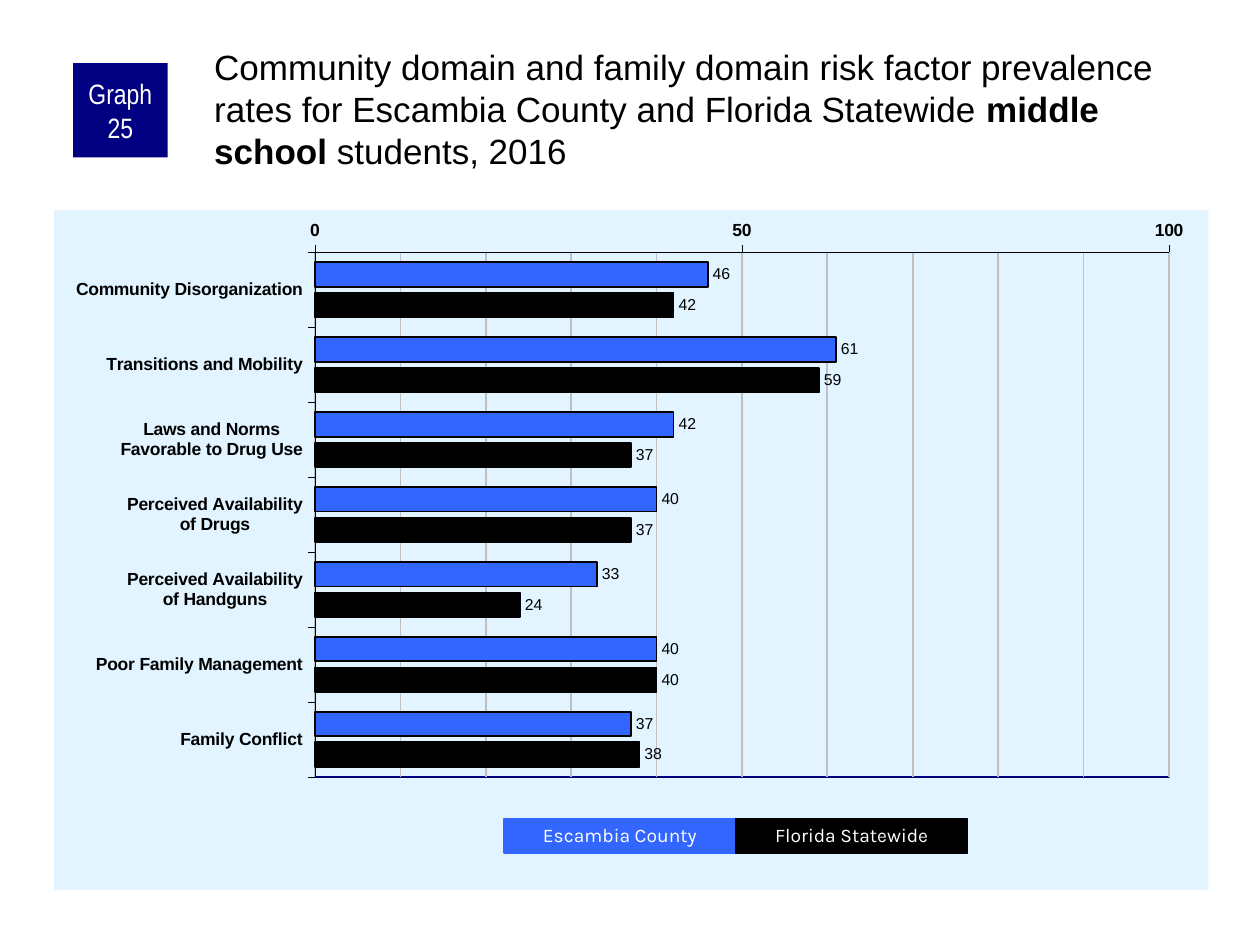
import pptx
import pptx.chart.data
import pptx.dml.color
import pptx.enum.chart
import pptx.enum.shapes
import pptx.enum.text
import pptx.oxml
import pptx.oxml.ns
import pptx.util
from pptx.util import Inches, Pt

CHART = pptx.enum.chart
TEXT = pptx.enum.text

TITLE = [
    ("Community domain and family domain risk factor prevalence rates "
     "for Escambia County and Florida Statewide ", False),
    ("middle school", True),
    (" students, 2016", False),
]
RATES = [
    ("Community Disorganization", 46, 42),
    ("Transitions and Mobility", 61, 59),
    ("Laws and Norms\nFavorable to Drug Use", 42, 37),
    ("Perceived Availability\nof Drugs", 40, 37),
    ("Perceived Availability\nof Handguns", 33, 24),
    ("Poor Family Management", 40, 40),
    ("Family Conflict", 37, 38),
]
AREAS = [("Escambia County", "3366FF"), ("Florida Statewide", "000000")]
PLOT = {"x": 0.226, "y": 0.062, "w": 0.74, "h": 0.772}
KEY = (4, 6.5, 1.84, 0.27)


def color(code):
    return pptx.dml.color.RGBColor.from_string(code)


def style(font, size, code, name="Arial", bold=None):
    font.size, font.name, font.bold = Pt(size), name, bold
    font.color.rgb = color(code)


def stroke(line, code, width):
    line.color.rgb = color(code)
    line.width = Pt(width)


def node(tag, body):
    return pptx.oxml.parse_xml(
        f'<c:{tag} {pptx.oxml.ns.nsdecls("c", "a")}>{body}</c:{tag}>')


def solid(code):
    return f'<a:solidFill><a:srgbClr val="{code}"/></a:solidFill>'


def border(code):
    """Return the XML of a one-point line."""
    return f'<a:ln w="{Pt(1)}">{solid(code)}</a:ln>'


def add_title(slide):
    title = slide.shapes.title
    title.left, title.top = Inches(1.67), Inches(0.33)
    title.width, title.height = Inches(7.92), Inches(0.83)
    frame = title.text_frame
    frame.auto_size = TEXT.MSO_AUTO_SIZE.NONE
    frame.word_wrap = True
    frame.vertical_anchor = TEXT.MSO_ANCHOR.TOP
    frame.margin_left = frame.margin_top = Inches(0.03)
    frame.margin_right = frame.margin_bottom = 0
    para = frame.paragraphs[0]
    para.alignment = TEXT.PP_ALIGN.LEFT
    style(para.font, 20, "000000")
    for text, bold in TITLE:
        run = para.add_run()
        run.text, run.font.bold = text, bold


def add_box(slide, text, place, fill, size, font):
    box = slide.shapes.add_shape(
        pptx.enum.shapes.MSO_SHAPE.RECTANGLE, *map(Inches, place))
    box.shadow.inherit = False
    box.fill.solid()
    box.fill.fore_color.rgb = color(fill)
    box.line.fill.background()
    frame = box.text_frame
    frame.word_wrap = True
    frame.vertical_anchor = TEXT.MSO_ANCHOR.MIDDLE
    para = frame.paragraphs[0]
    para.text = text
    para.alignment = TEXT.PP_ALIGN.CENTER
    style(para.font, size, "FFFFFF", font)
    return box


def add_rates(slide):
    data = pptx.chart.data.CategoryChartData()
    data.categories = [row[0] for row in RATES]
    for i in range(len(AREAS)):
        data.add_series(f"Series {i + 1}", [row[i + 1] for row in RATES])
    chart = slide.shapes.add_chart(
        CHART.XL_CHART_TYPE.BAR_CLUSTERED,
        *map(Inches, (0.43, 1.67, 9.16, 5.39)), data).chart
    chart.has_legend = chart.has_title = False
    style(chart.font, 11.8, "000000")

    plot = chart.plots[0]
    plot.gap_width, plot.overlap = 80, -25
    plot.vary_by_categories = False
    for series, (_, code) in zip(plot.series, AREAS):
        series.format.fill.solid()
        series.format.fill.fore_color.rgb = color(code)
        stroke(series.format.line, "000000", 1)
        labels = series.data_labels
        labels.show_value = True
        labels.position = CHART.XL_LABEL_POSITION.OUTSIDE_END
        style(labels.font, 9, "000000")

    cats, vals = chart.category_axis, chart.value_axis
    for axis in (cats, vals):
        axis.major_tick_mark = CHART.XL_TICK_MARK.OUTSIDE
        axis.minor_tick_mark = CHART.XL_TICK_MARK.NONE
        stroke(axis.format.line, "000000", 0.25)
        style(axis.tick_labels.font, 10, "000000", bold=True)
    cats.reverse_order = True
    cats.crosses = CHART.XL_AXIS_CROSSES.MAXIMUM
    vals.minimum_scale, vals.maximum_scale = 0, 100
    vals.major_unit, vals.minor_unit = 50, 10
    vals.has_major_gridlines = vals.has_minor_gridlines = True
    stroke(vals.major_gridlines.format.line, "C0C0C0", 1)
    paint(chart)


def paint(chart):
    """Set the plot place and border, minor grid and background."""
    root, qn = chart.element, pptx.oxml.ns.qn
    root.find(".//" + qn("c:minorGridlines")).append(
        node("spPr", border("C0C0C0")))
    area = root.find(".//" + qn("c:plotArea"))
    for old in area.findall(qn("c:layout")):
        area.remove(old)
    modes = "".join(f'<c:{k}Mode val="edge"/>' for k in "xy")
    sizes = "".join(f'<c:{k} val="{v}"/>' for k, v in PLOT.items())
    area.insert(0, node(
        "layout", f'<c:manualLayout><c:layoutTarget val="inner"/>'
                  f'{modes}{sizes}</c:manualLayout>'))
    area.append(node("spPr", "<a:noFill/>" + border("000080")))
    root.find(qn("c:chart")).addnext(node(
        "spPr", solid("E1F4FF") + "<a:ln><a:noFill/></a:ln>"))


def main():
    deck = pptx.Presentation()
    deck.slide_width, deck.slide_height = Inches(10), Inches(7.5)
    slide = deck.slides.add_slide(deck.slide_layouts[5])
    add_title(slide)
    add_rates(slide)

    badge = add_box(slide, "Graph 25", (0.58, 0.5, 0.75, 0.75),
                    "000080", 16, "Arial Narrow").text_frame
    badge.margin_left = badge.margin_right = Inches(0.05)
    badge.margin_top = badge.margin_bottom = 0

    left, top, width, height = KEY
    for i, (name, code) in enumerate(AREAS):
        box = add_box(slide, name, (left + i * width, top, width, height),
                      code, 11, "Karla")
        stroke(box.line, code, 0.75)
        box.text_frame.paragraphs[0].line_spacing = 0.9
    deck.save("out.pptx")


if __name__ == "__main__":
    main()
